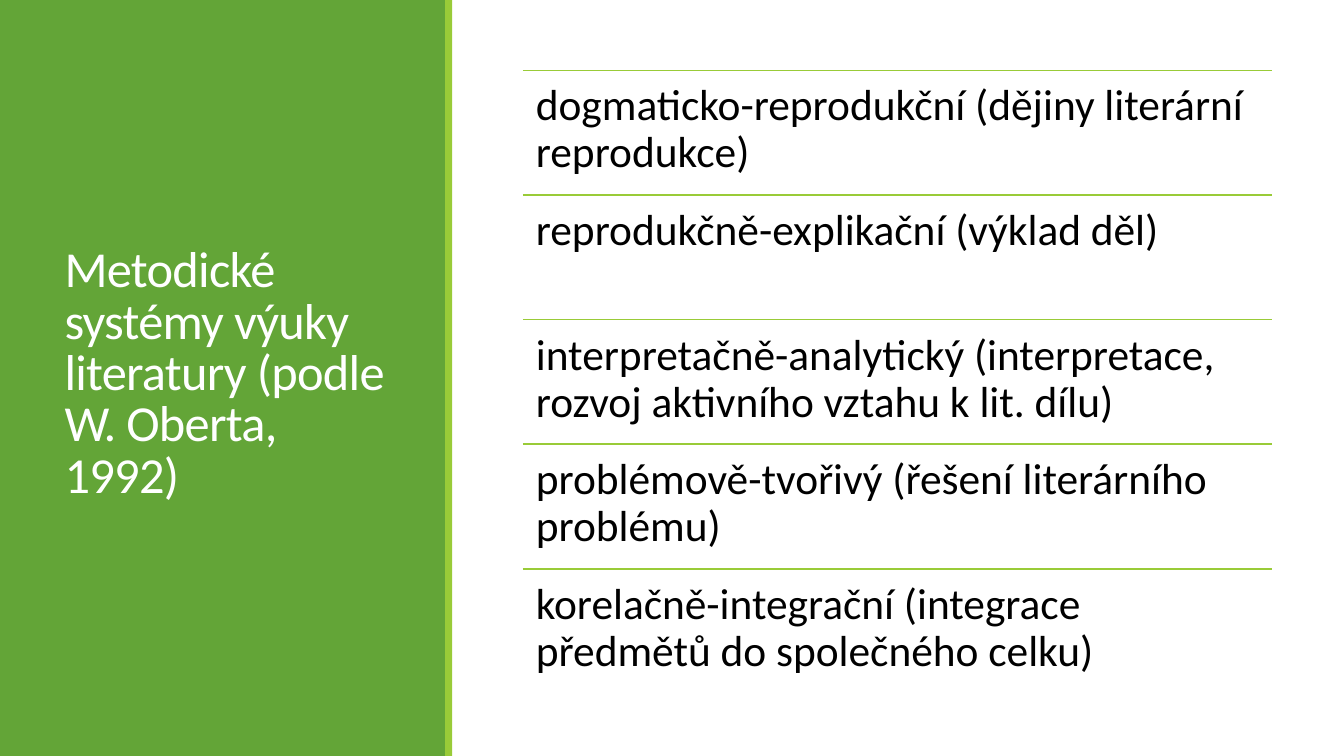
import pptx
import pptx.util
import pptx.dml.color
import pptx.enum.shapes
import pptx.enum.text
import lxml.etree

Pt = pptx.util.Pt
RGB = pptx.dml.color.RGBColor
GREEN = RGB(0x63, 0xA5, 0x37)
LIME = RGB(0x99, 0xCB, 0x38)
WHITE = RGB(0xFF, 0xFF, 0xFF)
BLACK = RGB(0, 0, 0)

deck = pptx.Presentation()
deck.slide_width, deck.slide_height = Pt(960), Pt(540)
slide = deck.slides.add_slide(deck.slide_layouts[6])
shapes = slide.shapes


def add_text(text, left, top, width, height, inset, size, color, spacing):
    box = shapes.add_textbox(Pt(left), Pt(top), Pt(width), Pt(height))
    frame = box.text_frame
    frame.word_wrap = True
    frame.margin_left = frame.margin_right = Pt(inset[0])
    frame.margin_top = frame.margin_bottom = Pt(inset[1])
    para = frame.paragraphs[0]
    para.text = text
    para.line_spacing = spacing
    para.font.name = "Calibri"
    para.font.size = Pt(size)
    para.font.color.rgb = color
    return frame


# Side panel and its edge
for left, width, color in ((0, 319, GREEN), (318, 5, LIME)):
    panel = shapes.add_shape(pptx.enum.shapes.MSO_SHAPE.RECTANGLE,
                             Pt(left), 0, Pt(width), Pt(540))
    panel.shadow.inherit = False
    panel.fill.solid()
    panel.fill.fore_color.rgb = color
    panel.line.fill.background()

# Title, with slightly tightened letters
title = add_text("Metodické systémy výuky literatury (podle W. Oberta, 1992)",
                 39, 41, 243, 454, (7.2, 3.6), 36, WHITE, 0.85)
title.vertical_anchor = pptx.enum.text.MSO_ANCHOR.MIDDLE
title.paragraphs[0].runs[0].font._element.set("spc", "-50")

# Ruled list of systems
SYSTEMS = (
    "dogmaticko-reprodukční (dějiny literární reprodukce)",
    "reprodukčně-explikační (výklad děl)",
    "interpretačně-analytický (interpretace, rozvoj aktivního vztahu k lit. dílu)",
    "problémově-tvořivý (řešení literárního problému)",
    "korelačně-integrační (integrace předmětů do společného celku)",
)
LEFT, TOP, WIDTH, STEP = 373.5, 50.3, 535, 89
for row, system in enumerate(SYSTEMS):
    top = TOP + row * STEP
    rule = shapes.add_connector(pptx.enum.shapes.MSO_CONNECTOR.STRAIGHT,
                                Pt(LEFT), Pt(top), Pt(LEFT + WIDTH), Pt(top))
    rule.line.color.rgb = LIME
    rule.line.width = Pt(1.25)
    lxml.etree.SubElement(rule._element.spPr, pptx.oxml.ns.qn("a:effectLst"))
    add_text(system, LEFT, top, WIDTH, STEP, (9.3, 9.3), 31, BLACK, 0.9)

deck.save("out.pptx")
